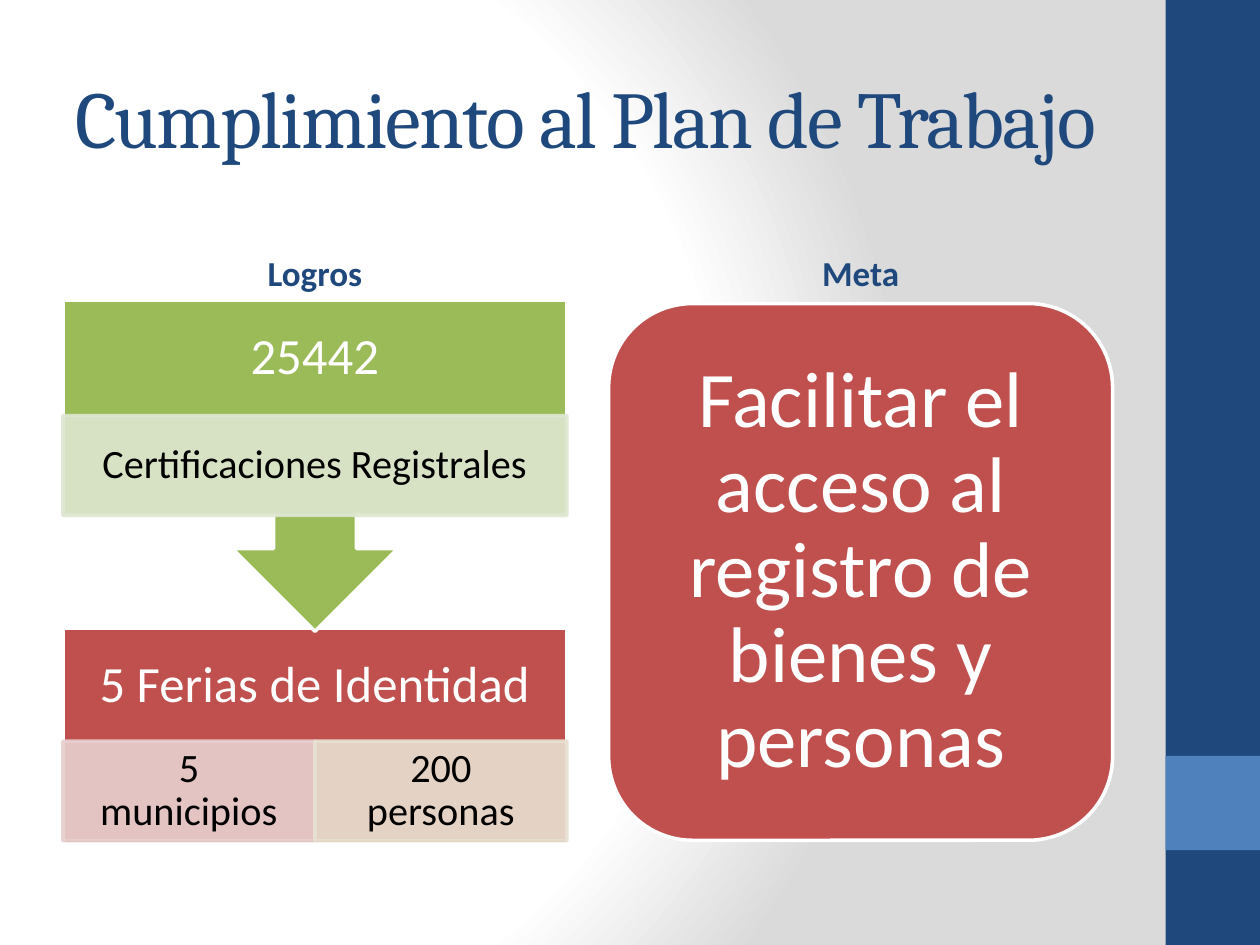
"""Build the work-plan slide: achievements on the left, goal on the right."""
from dataclasses import dataclass
from typing import Any, Optional

import pptx
import pptx.dml.color
import pptx.enum.shapes
import pptx.enum.text
import pptx.oxml
import pptx.oxml.ns
import pptx.util

Cm = pptx.util.Cm
Pt = pptx.util.Pt
Geometry = pptx.enum.shapes.MSO_SHAPE
Anchor = pptx.enum.text.MSO_ANCHOR
Align = pptx.enum.text.PP_ALIGN

NAVY, BLUE, RED, GREEN = "1F497D", "4F81BD", "C0504D", "9BBB59"
WHITE, BLACK = "FFFFFF", "000000"
SLIDE_WIDTH, SLIDE_HEIGHT = 25.4, 19.05
MARGIN, COLUMN, GOAL_LEFT = 1.27, 10.16, 12.27
BAND, STRIP, STRIP_HEIGHT = 2.34, 1.9, 2.01
HEADING_TOP, HEADING_HEIGHT = 4.27, 1.78
CALLOUT_TOP, FAIRS_TOP, DETAIL_TOP = 6.05, 12.67, 14.94
BAND_INSETS = (0.58, 0.58, 0.58, 0.58)


@dataclass(frozen=True)
class Box:
    left: float
    top: float
    width: float
    height: float

    def lengths(self) -> tuple:
        return tuple(Cm(side) for side in (self.left, self.top, self.width, self.height))


@dataclass(frozen=True)
class Detail:
    text: str
    box: Box
    tint: str


DETAILS = [
    Detail("5 municipios", Box(MARGIN, DETAIL_TOP, COLUMN / 2, STRIP_HEIGHT), "E8D0D0"),
    Detail("200 personas", Box(MARGIN + COLUMN / 2, DETAIL_TOP, COLUMN / 2, STRIP_HEIGHT), "E8E1D1"),
]
CERTIFICATES = Detail(
    "Certificaciones Registrales", Box(MARGIN, 8.38, COLUMN, STRIP_HEIGHT), "DEE7D1")
HEADINGS = [("Logros", MARGIN), ("Meta", GOAL_LEFT)]


def paint(color_format: Any, color: str, opacity: int = 100) -> None:
    color_format.rgb = pptx.dml.color.RGBColor.from_string(color)


def paint_fill(fill: Any, color: str, opacity: int = 100) -> None:
    fill.solid()
    paint(fill.fore_color, color)
    if opacity < 100:
        solid = fill._xPr.find(pptx.oxml.ns.qn("a:solidFill"))
        alpha = pptx.oxml.parse_xml(
            f'<a:alpha {pptx.oxml.ns.nsdecls("a")} val="{opacity * 1000}"/>')
        solid[0].append(alpha)


def write(shape: Any, text: str, *, size: float, color: str, font: str = "Calibri",
          bold: bool = False, align: Any = Align.CENTER, anchor: Any = Anchor.MIDDLE,
          insets: tuple = (0.25, 0.13, 0.25, 0.13), line_spacing: float = 0.9,
          tracking: Optional[int] = None) -> None:
    frame = shape.text_frame
    frame.word_wrap = True
    frame.vertical_anchor = anchor
    (frame.margin_left, frame.margin_top,
     frame.margin_right, frame.margin_bottom) = (Cm(inset) for inset in insets)
    paragraph = frame.paragraphs[0]
    paragraph.alignment = align
    paragraph.line_spacing = line_spacing
    run = paragraph.add_run()
    run.text = text
    run.font.size = Pt(size)
    run.font.name = font
    run.font.bold = bold
    paint(run.font.color, color)
    if tracking is not None:
        run.font._element.set("spc", str(tracking))


def add_block(slide: Any, box: Box, fill: str, *, line: Optional[str] = None,
              opacity: int = 100, geometry: Any = Geometry.RECTANGLE) -> Any:
    block = slide.shapes.add_shape(geometry, *box.lengths())
    block.shadow.inherit = False
    paint_fill(block.fill, fill, opacity)
    if line:
        block.line.width = Pt(2)
        paint_fill(block.line.fill, line, opacity)
    else:
        block.line.fill.background()
    return block


def add_detail(slide: Any, detail: Detail) -> None:
    strip = add_block(slide, detail.box, detail.tint, line=detail.tint, opacity=90)
    write(strip, detail.text, size=23, color=BLACK, insets=(0.46, 0.08, 0.46, 0.08))


def set_background(slide: Any) -> None:
    slide.background.fill.gradient()
    old = next(slide._element.iter(pptx.oxml.ns.qn("a:gradFill")))
    stops = "".join(
        f'<a:gs pos="{position * 1000}"><a:srgbClr val="{color}"/></a:gs>'
        for position, color in [(0, WHITE), (75, WHITE), (100, "DADADA")])
    radial = pptx.oxml.parse_xml(
        f'<a:gradFill {pptx.oxml.ns.nsdecls("a")} rotWithShape="1"><a:gsLst>{stops}</a:gsLst>'
        '<a:path path="circle"><a:fillToRect l="20000" t="50000" r="100000" b="50000"/>'
        '</a:path></a:gradFill>')
    old.getparent().replace(old, radial)


def main() -> None:
    deck = pptx.Presentation()
    deck.slide_width, deck.slide_height = Cm(SLIDE_WIDTH), Cm(SLIDE_HEIGHT)
    slide = deck.slides.add_slide(deck.slide_layouts[6])
    set_background(slide)

    side = SLIDE_WIDTH - STRIP
    add_block(slide, Box(side, 0, STRIP, SLIDE_HEIGHT), NAVY)
    add_block(slide, Box(side, 15.24, STRIP, STRIP), BLUE)

    title = slide.shapes.add_textbox(*Box(MARGIN, 0.76, 21.16, 3.18).lengths())
    write(title, "Cumplimiento al Plan de Trabajo", size=46, color=NAVY, font="Cambria",
          align=Align.LEFT, line_spacing=1.0, tracking=-100)
    for label, left in HEADINGS:
        heading = slide.shapes.add_textbox(
            *Box(left, HEADING_TOP, COLUMN, HEADING_HEIGHT).lengths())
        write(heading, label, size=20, color=NAVY, bold=True, anchor=Anchor.BOTTOM,
              line_spacing=1.0)

    fairs_height = 4.34
    fairs = add_block(slide, Box(MARGIN, FAIRS_TOP, COLUMN, fairs_height), RED, line=WHITE)
    write(fairs, "5 Ferias de Identidad", size=29, color=WHITE,
          insets=BAND_INSETS[:3] + (fairs_height - BAND + BAND_INSETS[3],))
    for detail in DETAILS:
        add_detail(slide, detail)

    callout = add_block(slide, Box(MARGIN, CALLOUT_TOP, COLUMN, 6.68), GREEN, line=WHITE,
                        geometry=Geometry.UP_ARROW_CALLOUT)
    callout.rotation = 180
    total = slide.shapes.add_textbox(*Box(MARGIN, CALLOUT_TOP, COLUMN, BAND).lengths())
    write(total, "25442", size=29, color=WHITE, insets=BAND_INSETS)
    add_detail(slide, CERTIFICATES)

    goal = add_block(slide, Box(GOAL_LEFT, 6.12, COLUMN, 10.82), RED, line=WHITE,
                     geometry=Geometry.ROUNDED_RECTANGLE)
    write(goal, "Facilitar el acceso al registro de bienes y personas", size=45, color=WHITE,
          insets=(0.48, 0.48, 0.48, 0.48))

    deck.save("out.pptx")


if __name__ == "__main__":
    main()
